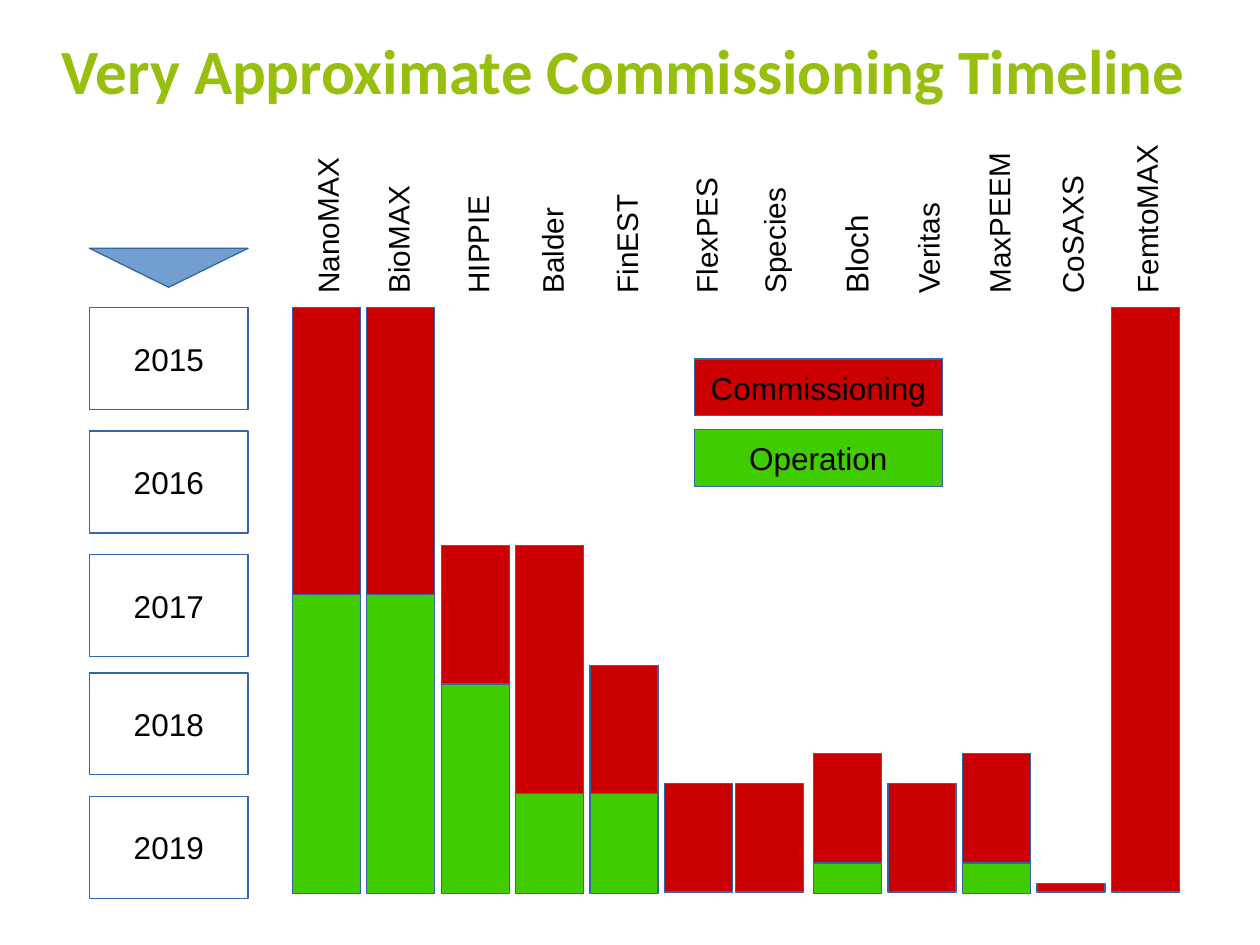
from pptx import Presentation
from pptx.dml.color import RGBColor
from pptx.enum.shapes import MSO_SHAPE
from pptx.enum.text import MSO_ANCHOR, MSO_AUTO_SIZE, PP_ALIGN
from pptx.util import Inches, Pt

RECTANGLE = MSO_SHAPE.RECTANGLE
MIDDLE, BOTTOM = MSO_ANCHOR.MIDDLE, MSO_ANCHOR.BOTTOM
CENTER, LEFT = PP_ALIGN.CENTER, PP_ALIGN.LEFT
NO_AUTO_SIZE = MSO_AUTO_SIZE.NONE
RED, GREEN, BLUE, OUTLINE = "CC0000", "40CC00", "729FCF", "3465A4"
BLACK, TITLE_GREEN = "000000", "97BF0D"

YEAR_LEFT, YEAR_WIDTH, YEAR_HEIGHT = 0.71, 1.26, 0.81
BAR_LEFT, BAR_STEP, BAR_WIDTH = 2.32, 0.591, 0.54
CHART_TOP, CHART_BOTTOM = 2.44, 7.09
LABEL_BOTTOM, LABEL_HEIGHT = 2.43, 0.37


def style_text(shape, text, size, name="Arial", color=BLACK, bold=False, align=LEFT):
    shape.text_frame.text = text
    paragraph = shape.text_frame.paragraphs[0]
    paragraph.alignment = align
    font = paragraph.runs[0].font
    font.size, font.name, font.bold = Pt(size), name, bold
    font.color.rgb = RGBColor.from_string(color)


def add_box(left, top, width, height, fill=None, text=None):
    shape = slide.shapes.add_shape(
        RECTANGLE, Inches(left), Inches(top), Inches(width), Inches(height))
    shape.shadow.inherit = False
    if fill:
        shape.fill.solid()
        shape.fill.fore_color.rgb = RGBColor.from_string(fill)
    else:
        shape.fill.background()
    shape.line.color.rgb = RGBColor.from_string(OUTLINE)
    shape.line.width = Pt(0.75)
    if text:
        style_text(shape, text, 18, align=CENTER)
        shape.text_frame.word_wrap = False
        shape.text_frame.vertical_anchor = MIDDLE


presentation = Presentation()
presentation.slide_width, presentation.slide_height = Inches(10), Inches(7.5)
slide = presentation.slides.add_slide(presentation.slide_layouts[5])

title = slide.shapes.title
title.left, title.top = Inches(0.39), Inches(0.27)
title.width, title.height = Inches(9.21), Inches(0.63)
style_text(title, "Very Approximate Commissioning Timeline", 36, "Calibri", TITLE_GREEN, True)
title.text_frame.auto_size = NO_AUTO_SIZE
title.text_frame.vertical_anchor = BOTTOM

year_tops = {"2015": CHART_TOP, "2016": 3.42, "2017": 4.4, "2018": 5.34, "2019": 6.32}
for year, top in year_tops.items():
    add_box(YEAR_LEFT, top, YEAR_WIDTH, YEAR_HEIGHT, text=year)

# name, label length, label size, label shift, bar shift, start, operation start, end
beamlines = [
    ("NanoMAX", 1.33, 17, 0, 0, CHART_TOP, 4.72, CHART_BOTTOM),
    ("BioMAX", 1.1, 17, -0.03, 0, CHART_TOP, 4.72, CHART_BOTTOM),
    ("HIPPIE", 1.02, 17, 0.01, 0, 4.33, 5.43, CHART_BOTTOM),
    ("Balder", 0.92, 17, 0.01, 0, 4.33, 6.3, CHART_BOTTOM),
    ("FinEST", 1.03, 17, 0.01, 0, 5.28, 6.3, CHART_BOTTOM),
    ("FlexPES", 1.17, 17, 0.05, 0, 6.22, 7.08, None),
    ("Species", 1.08, 17, 0, -0.03, 6.22, 7.08, None),
    ("Bloch", 0.92, 18, 0.05, 0, 5.98, 6.85, CHART_BOTTOM),
    ("Veritas", 0.96, 17, 0.04, 0, 6.22, 7.08, None),
    ("MaxPEEM", 1.38, 17, 0.01, 0, 5.98, 6.85, CHART_BOTTOM),
    ("CoSAXS", 1.18, 17, 0, 0, 7.01, 7.08, None),
    ("FemtoMAX", 1.45, 17, 0, 0, CHART_TOP, 7.08, None),
]
for column, (name, length, size, label_shift, bar_shift, start, switch, end) in enumerate(beamlines):
    left = BAR_LEFT + column * BAR_STEP
    center = left + BAR_WIDTH / 2 + label_shift
    label = slide.shapes.add_textbox(
        Inches(center - length / 2), Inches(LABEL_BOTTOM - (length + LABEL_HEIGHT) / 2),
        Inches(length), Inches(LABEL_HEIGHT))
    label.rotation = 269.7
    style_text(label, name, size)
    label.text_frame.word_wrap = False
    add_box(left + bar_shift, start, BAR_WIDTH, switch - start, RED)
    if end:
        add_box(left + bar_shift, switch, BAR_WIDTH, end - switch, GREEN)

arrow_right, arrow_top, arrow_tip = YEAR_LEFT + YEAR_WIDTH, 1.97, 2.28
builder = slide.shapes.build_freeform(
    Inches(YEAR_LEFT + YEAR_WIDTH / 2), Inches(arrow_tip))
builder.add_line_segments(
    [(Inches(arrow_right), Inches(arrow_top)), (Inches(YEAR_LEFT), Inches(arrow_top))], close=True)
arrow = builder.convert_to_shape()
arrow.shadow.inherit = False
arrow.fill.solid()
arrow.fill.fore_color.rgb = RGBColor.from_string(BLUE)
arrow.line.color.rgb = RGBColor.from_string(OUTLINE)
arrow.line.width = Pt(0.75)

for row, (text, fill) in enumerate([("Commissioning", RED), ("Operation", GREEN)]):
    add_box(5.51, 2.85 + row * 0.56, 1.97, 0.45, fill, text)

presentation.save("out.pptx")
